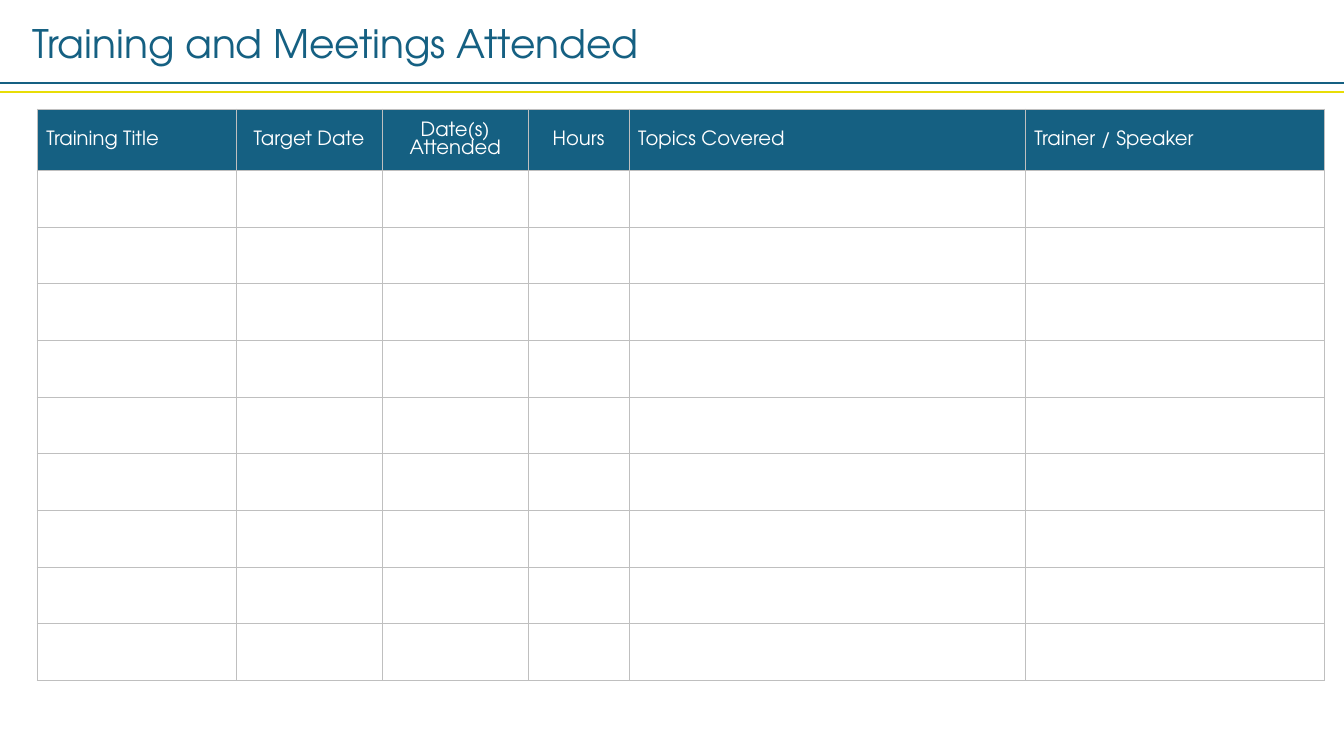
"""Build the training and meetings log slide."""
import pptx
import pptx.util
import pptx.dml.color
import pptx.enum.shapes
import pptx.enum.text
import pptx.oxml
import pptx.oxml.ns

TITLE = "Training and Meetings Attended"
HEADS = [
    ("Training Title", 1.97, "left"),
    ("Target Date", 1.45, "center"),
    ("Date(s) Attended", 1.45, "center"),
    ("Hours", 1, "center"),
    ("Topics Covered", 3.93, "left"),
    ("Trainer / Speaker", 2.97, "left"),
]
BLANKS = 9
HEAD_H, ROW_H = 0.61, 0.56
WIDE, HIGH = 13.33, 7.5
COLORS = {"blue": "156082", "gold": "E8DD06", "grid": "BFBFBF", "white": "FFFFFF"}
RULES = [("blue", 0.82), ("gold", 0.91)]
FONT = "TeX Gyre Adventor"
SIDES = ("lnL", "lnR", "lnT", "lnB")
LOG_H = 5.67

Inch = pptx.util.Inches
Pt = pptx.util.Pt
Align = pptx.enum.text.PP_ALIGN
Anchor = pptx.enum.text.MSO_ANCHOR


def color(name):
    return pptx.dml.color.RGBColor.from_string(COLORS[name])


def style(para, size, name):
    for run in para.runs:
        run.font.name = FONT
        run.font.size = Pt(size)
        run.font.color.rgb = color(name)


def add_title(slide):
    box = slide.shapes.add_textbox(Inch(0.22), Inch(0.14), Inch(8.08), Inch(0.57))
    frame = box.text_frame
    frame.word_wrap = True
    frame.text = TITLE
    style(frame.paragraphs[0], 28, "blue")


def add_rule(slide, name, top):
    kind = pptx.enum.shapes.MSO_CONNECTOR.STRAIGHT
    line = slide.shapes.add_connector(kind, 0, Inch(top), Inch(WIDE), Inch(top))
    line.line.color.rgb = color(name)
    line.line.width = Pt(1.5)
    props = line._element.spPr
    props.append(pptx.oxml.parse_xml(
        f'<a:effectLst {pptx.oxml.ns.nsdecls("a")}/>'))


def add_grid(cell):
    props = cell._tc.get_or_add_tcPr()
    for spot, side in enumerate(SIDES):
        props.insert(spot, pptx.oxml.parse_xml(
            f'<a:{side} {pptx.oxml.ns.nsdecls("a")} w="{Pt(0.5)}"><a:solidFill>'
            f'<a:srgbClr val="{COLORS["grid"]}"/></a:solidFill></a:{side}>'))


def fill_head(cell, text, side):
    cell.vertical_anchor = Anchor.MIDDLE
    cell.margin_left = Inch(0.09 if side == "left" else 0.01)
    cell.margin_right = cell.margin_top = Inch(0.01)
    cell.margin_bottom = 0
    cell.text_frame.text = text
    para = cell.text_frame.paragraphs[0]
    para.alignment = Align.LEFT if side == "left" else Align.CENTER
    style(para, 14, "white")


def add_log(slide):
    width = sum(wide for _, wide, _ in HEADS)
    frame = slide.shapes.add_table(BLANKS + 1, len(HEADS), Inch(0.37), Inch(1.08),
                                   Inch(width), Inch(LOG_H))
    table = frame.table
    table.horz_banding = False
    for r, row in enumerate(table.rows):
        row.height = Inch((LOG_H - HEAD_H) / BLANKS if r else HEAD_H)
        for cell, (text, _, side) in zip(row.cells, HEADS):
            cell.fill.solid()
            cell.fill.fore_color.rgb = color("white" if r else "blue")
            add_grid(cell)
            if r == 0:
                fill_head(cell, text, side)
    for col, (_, wide, _) in zip(table.columns, HEADS):
        col.width = Inch(wide)


def main():
    deck = pptx.Presentation()
    deck.slide_width, deck.slide_height = Inch(WIDE), Inch(HIGH)
    slide = deck.slides.add_slide(deck.slide_layouts[6])
    add_title(slide)
    for name, top in RULES:
        add_rule(slide, name, top)
    add_log(slide)
    deck.save("out.pptx")


if __name__ == "__main__":
    main()
